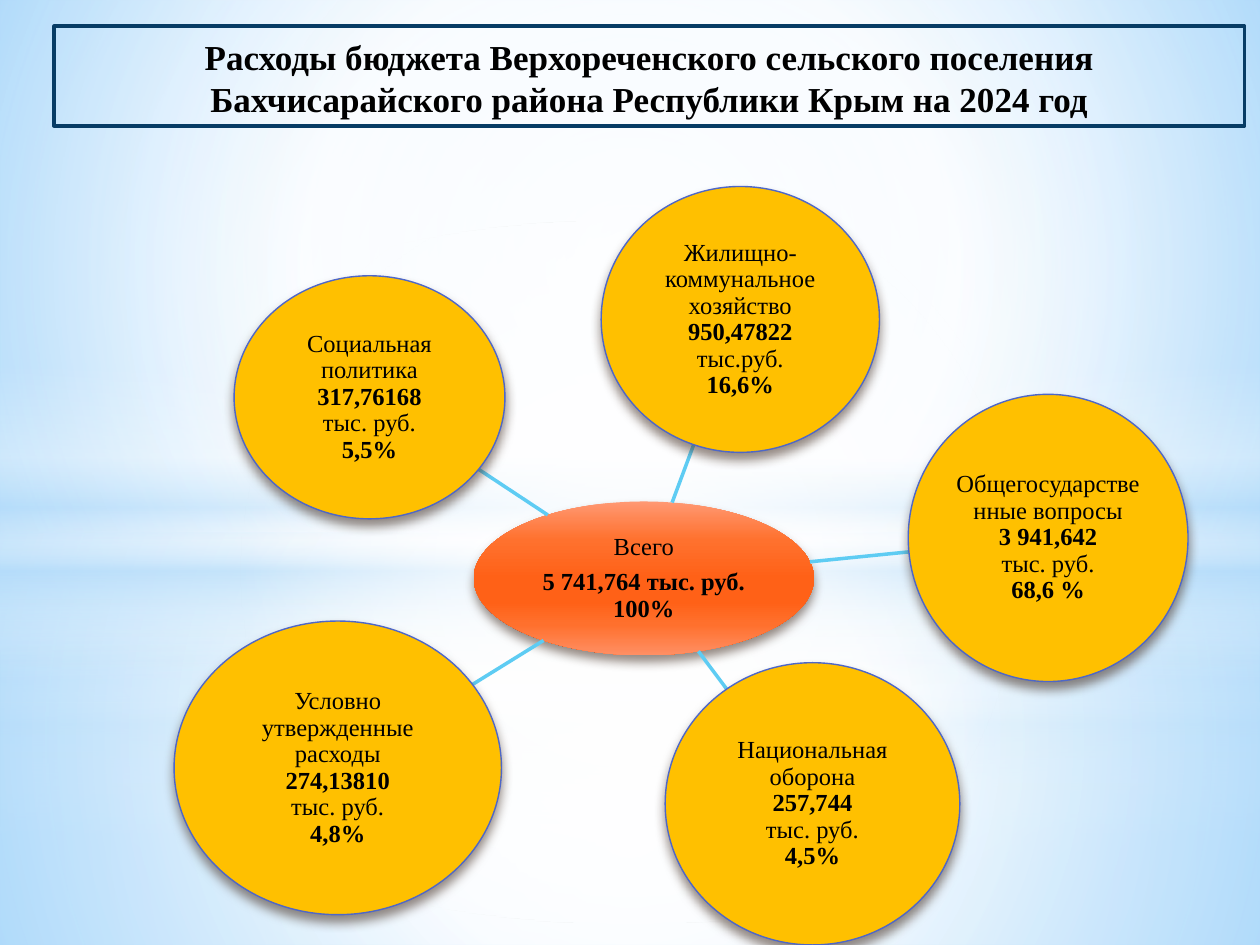
from dataclasses import dataclass
from math import hypot

from lxml.etree import SubElement
from pptx import Presentation
from pptx.dml.color import RGBColor
from pptx.enum.shapes import MSO_CONNECTOR as Connector, MSO_SHAPE as Shape
from pptx.enum.text import MSO_ANCHOR as Anchor, PP_ALIGN as Align
from pptx.oxml import parse_xml
from pptx.oxml.ns import nsdecls, qn
from pptx.util import Cm, Pt


@dataclass(frozen=True)
class Theme:
    font: str = "Times New Roman"
    title_size: int = 20
    body_size: int = 14
    text: str = "000000"
    title_line: str = "073C65"
    node: str = "FFC000"
    node_line: str = "4E67C8"
    spoke: str = "5ECCF3"
    shadow: str = "4E3B30"
    white: str = "FFFFFF"
    haze: str = "B4DCFA"


theme = Theme()
WIDTH, HEIGHT = 25.4, 19.05

# Content: each paragraph is (text, bold); boxes are left, top, width, height in cm
TITLE = ("Расходы бюджета Верхореченского сельского поселения "
         "Бахчисарайского района Республики Крым на 2024 год")
TITLE_BOX = (1.09, 0.53, 24, 2.01)
HUB_BOX = (9.55, 10.11, 6.86, 3.1)
HUB_TEXT = [("Всего", False), ("5 741,764 тыс. руб. 100%", True)]
NODES = [  # name, amount, unit, share, box
    ("Национальная оборона", "257,744", "тыс. руб.", "4,5%", (13.41, 13.36, 5.94, 5.69)),
    ("Жилищно-коммунальное хозяйство", "950,47822", "тыс.руб.", "16,6%",
     (12.12, 3.76, 5.61, 5.36)),
    ("Общегосударственные вопросы", "3 941,642", "тыс. руб.", "68,6 %",
     (18.31, 7.95, 5.64, 5.79)),
    ("Социальная политика", "317,76168", "тыс. руб.", "5,5%", (4.72, 5.56, 5.46, 4.9)),
    ("Условно утвержденные расходы", "274,13810", "тыс. руб.", "4,8%",
     (3.51, 12.52, 6.6, 5.92)),
]

# Gradients: stops are (position, colour, opacity), all in percent
CENTRE = (50, 50, 50, 50)
PAGE_STOPS = [(0, "9ED5FF", 100), (60, theme.white, 100), (100, "5BB9FF", 100)]
HUB_STOPS = [(0, "FF9872", 100), (25, "FF712E", 100), (50, "FF6117", 100),
             (65, "FF6117", 100), (80, "FF702D", 100), (100, "FF8F64", 100)]
BAND_STOPS = [(0, theme.white, 0), (29, theme.white, 30), (45, theme.haze, 40),
              (55, theme.white, 26), (65, theme.haze, 60), (100, theme.white, 0)]


def haze_stops(inner, middle, middle_alpha, outer):
    return [(0, theme.white, inner), (middle, theme.white, middle_alpha),
            (100, theme.haze, outer)]


def glow_stops(end):
    return [(0, theme.white, 100), (end, theme.white, 0)]


LAYERS = [  # shape, top, height, stops, focus (None means vertical)
    (Shape.RECTANGLE, 14.17, 4.88, haze_stops(91, 37, 76, 79), CENTRE),
    (Shape.RECTANGLE, 0, 14.17, haze_stops(89, 48, 62, 79), CENTRE),
    (Shape.RECTANGLE, 10.46, 6.35, BAND_STOPS, None),
    (Shape.OVAL, 4.45, 14.17, glow_stops(56), CENTRE),
    (Shape.RECTANGLE, 10.74, 8.31, haze_stops(92, 37, 77, 80), CENTRE),
    (Shape.RECTANGLE, 0, 10.74, haze_stops(90, 48, 63, 80), CENTRE),
    (Shape.RECTANGLE, 7.37, 6.35, BAND_STOPS, None),
    (Shape.OVAL, 4.45, 14.17, glow_stops(54), CENTRE),
]


def set_gradient(fill, holder, stops, focus=None):
    """Swap a solid fill for a gradient: radial with a focus, else top to bottom."""
    fill.solid()
    fill.fore_color.rgb = RGBColor.from_string(theme.white)
    stop_xml = "".join(
        f'<a:gs pos="{pos * 1000}"><a:srgbClr val="{colour}">'
        f'<a:alpha val="{alpha * 1000}"/></a:srgbClr></a:gs>'
        for pos, colour, alpha in stops)
    if focus:
        left, top, right, bottom = (side * 1000 for side in focus)
        shade = (f'<a:path path="circle"><a:fillToRect l="{left}" t="{top}" '
                 f'r="{right}" b="{bottom}"/></a:path>')
    else:
        shade = '<a:lin ang="5400000" scaled="0"/>'
    solid = holder.find(qn("a:solidFill"))
    holder.replace(solid, parse_xml(
        f'<a:gradFill {nsdecls("a")} rotWithShape="1">'
        f'<a:gsLst>{stop_xml}</a:gsLst>{shade}</a:gradFill>'))


def add_box(page, kind, box, fill=None, line=None, line_width=1):
    shape = page.shapes.add_shape(kind, *(Cm(value) for value in box))
    shape.shadow.inherit = False
    if fill:
        shape.fill.solid()
        shape.fill.fore_color.rgb = RGBColor.from_string(fill)
    else:
        shape.fill.background()
    if line:
        shape.line.color.rgb = RGBColor.from_string(line)
        shape.line.width = Pt(line_width)
    else:
        shape.line.fill.background()
    return shape


def add_shadow(shape):
    effects = shape.element.spPr.find(qn("a:effectLst"))
    effects.append(parse_xml(
        f'<a:outerShdw {nsdecls("a")} blurRad="{Pt(6)}" dist="{Pt(4)}" dir="5400000" '
        f'rotWithShape="0"><a:srgbClr val="{theme.shadow}"><a:alpha val="60000"/>'
        f'</a:srgbClr></a:outerShdw>'))


def write_text(shape, lines, size=theme.body_size, anchor=Anchor.MIDDLE,
               spacing=0.9, inset=0.03, first_gap=0):
    frame = shape.text_frame
    frame.word_wrap = True
    frame.vertical_anchor = anchor
    frame.margin_left = frame.margin_right = Cm(inset)
    frame.margin_top = frame.margin_bottom = Cm(min(inset, 0.13))
    for index, (text, bold) in enumerate(lines):
        para = frame.add_paragraph() if index else frame.paragraphs[0]
        para.alignment = Align.CENTER
        para.line_spacing = spacing
        para.space_before = Pt(0)
        para.space_after = Pt(0 if index else first_gap)
        span = para.add_run()
        span.text = text
        span.font.name = theme.font
        span.font.size = Pt(size)
        span.font.bold = bold
        span.font.color.rgb = RGBColor.from_string(theme.text)


def centre_of(box):
    left, top, width, height = box
    return left + width / 2, top + height / 2


def edge_toward(box, target):
    """Point where the ellipse in box meets the ray from its centre to target."""
    x, y = centre_of(box)
    dx, dy = target[0] - x, target[1] - y
    scale = 1 / hypot(dx / (box[2] / 2), dy / (box[3] / 2))
    return x + dx * scale, y + dy * scale


def add_spoke(page, hub, node):
    ends = (*edge_toward(hub, centre_of(node)), *edge_toward(node, centre_of(hub)))
    spoke = page.shapes.add_connector(Connector.STRAIGHT, *(Cm(value) for value in ends))
    spoke.line.color.rgb = RGBColor.from_string(theme.spoke)
    spoke.line.width = Pt(2)
    SubElement(spoke.element.spPr, qn("a:effectLst"))


def main():
    deck = Presentation()
    deck.slide_width, deck.slide_height = Cm(WIDTH), Cm(HEIGHT)
    page = deck.slides.add_slide(deck.slide_layouts[6])

    # Background and its translucent layers
    fill = page.background.fill
    fill.solid()
    set_gradient(fill, page.element.xpath(".//p:bgPr")[0], PAGE_STOPS, (20, 10, 20, 60))
    for kind, top, height, stops, focus in LAYERS:
        layer = add_box(page, kind, (0, top, WIDTH, height))
        set_gradient(layer.fill, layer.element.spPr, stops, focus)

    # Total in the middle
    hub = add_box(page, Shape.OVAL, HUB_BOX)
    set_gradient(hub.fill, hub.element.spPr, HUB_STOPS)
    add_shadow(hub)
    write_text(hub, HUB_TEXT, first_gap=5)

    # Spending items around it
    for name, amount, unit, share, box in NODES:
        add_spoke(page, HUB_BOX, box)
        node = add_box(page, Shape.OVAL, box, theme.node, theme.node_line, 0.79)
        add_shadow(node)
        write_text(node, [(name, False), (amount, True), (unit, False), (share, True)])

    # Title
    title = add_box(page, Shape.RECTANGLE, TITLE_BOX, line=theme.title_line, line_width=2)
    write_text(title, [(TITLE, True)], size=theme.title_size, anchor=Anchor.BOTTOM,
               spacing=1.0, inset=0.25)

    deck.save("out.pptx")


if __name__ == "__main__":
    main()
